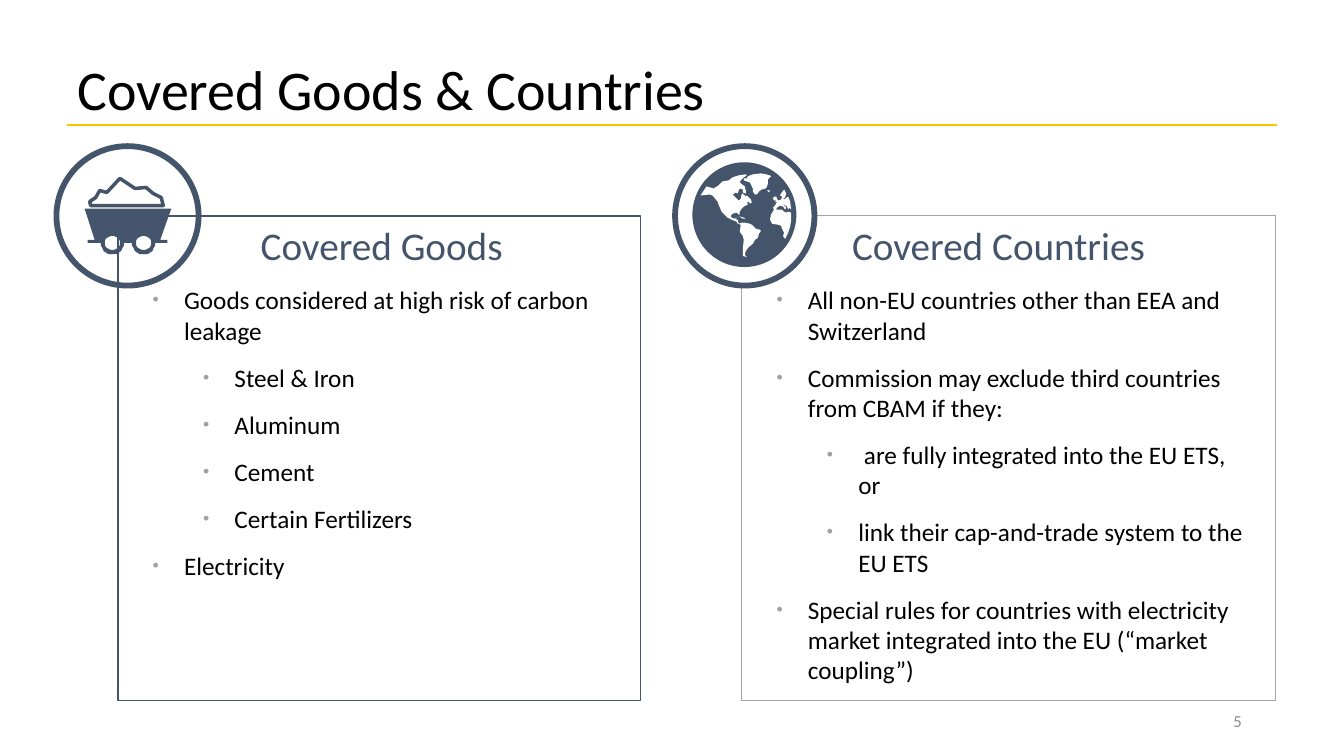
"""Build the slide on covered goods and countries."""
from dataclasses import dataclass
from math import cos, pi, sin

from lxml import etree
from pptx import Presentation
from pptx.dml.color import RGBColor
from pptx.enum.shapes import MSO_CONNECTOR, MSO_SHAPE
from pptx.enum.text import MSO_ANCHOR, PP_ALIGN
from pptx.oxml.ns import qn
from pptx.util import Cm, Pt


@dataclass(frozen=True)
class Theme:
    font: str = "Calibri"
    navy: str = "44546A"
    gold: str = "FFC000"
    grey: str = "A5A5A5"
    bullet: str = "A0A0A0"
    footer: str = "8C8C8C"
    black: str = "000000"
    white: str = "FFFFFF"
    title_size: int = 40
    heading_size: int = 28
    body_size: int = 18
    footer_size: int = 12


THEME = Theme()
TITLE = "Covered Goods & Countries"
PAGE_NUMBER = "5"

PANELS = [
    {
        "heading": "Covered Countries", "left": 18.69, "width": 13.46,
        "border": THEME.grey, "border_width": 0.75, "heading_margin": 0, "heading_indent": 0,
        "points": [
            (0, "All non-EU countries other than EEA and Switzerland"),
            (0, "Commission may exclude third countries from CBAM if they:"),
            (1, " are fully integrated into the EU ETS, or"),
            (1, "link their cap-and-trade system to the EU ETS"),
            (0, "Special rules for countries with electricity market integrated "
                "into the EU (“market coupling”)"),
        ],
    },
    {
        "heading": "Covered Goods", "left": 2.97, "width": 13.18,
        "border": THEME.navy, "border_width": 1, "heading_margin": 1.27, "heading_indent": -0.64,
        "points": [
            (0, "Goods considered at high risk of carbon leakage"),
            (1, "Steel & Iron"),
            (1, "Aluminum"),
            (1, "Cement"),
            (1, "Certain Fertilizers"),
            (0, "Electricity"),
        ],
    },
]
PANEL_TOP, PANEL_HEIGHT = 5.44, 12.22

ICON_UNIT = Cm(0.0254)
ORE = [(90, 204), (89, 200), (95, 196), (99, 189), (106, 191), (119, 177), (134, 187),
       (145, 186), (152, 192), (160, 196), (162, 204)]
WHEELS, AXLE, WHEEL_RADIUS, HUB_RADIUS = (111.5, 142.5), 241, 11.5, 7.5

AMERICAS = [
    (753, 232), (752, 236), (749, 238), (747, 242), (743, 245), (740, 249), (739, 253),
    (741, 255), (737, 254), (737, 247), (738, 238), (737, 234), (734, 230), (735, 223),
    (732, 222), (731, 220), (726, 218), (722, 216), (716, 210), (713, 203), (712, 200),
    (707, 194), (704, 193), (695, 194), (701, 185), (708, 187), (713, 184), (717, 180),
    (723, 179), (727, 176), (733, 174), (740, 173), (741, 174), (738, 176), (734, 180),
    (735, 182), (739, 185), (740, 189), (740, 192), (737, 191), (737, 188), (734, 187),
    (733, 189), (732, 192), (730, 191), (727, 193), (729, 195), (731, 197), (733, 199),
    (735, 197), (736, 192), (738, 193), (740, 195), (741, 194), (745, 198), (746, 201),
    (744, 202), (743, 200), (741, 201), (742, 203), (738, 205), (736, 207), (734, 210),
    (734, 213), (733, 213), (731, 211), (727, 212), (725, 214), (726, 216), (729, 217),
    (731, 216), (730, 218), (732, 218), (733, 222), (736, 221), (739, 221), (744, 222),
    (746, 223), (748, 225), (750, 227), (754, 228), (755, 229),
]
GREENLAND = [
    (756, 188), (753, 190), (751, 193), (749, 193), (747, 190), (747, 187), (745, 183),
    (744, 181), (741, 180), (738, 179), (738, 177), (741, 177), (742, 175), (747, 173),
    (755, 172), (760, 173), (764, 174), (765, 175), (762, 178), (762, 182), (761, 185),
    (760, 187),
]
CARIBBEAN = [(740, 217), (737, 217), (734, 215), (732, 215), (735, 215), (738, 216)]
ICELAND = [(761, 189), (764, 189), (763, 191)]
EURAFRICA = [
    (778, 236), (777, 234), (778, 231), (776, 227), (775, 224), (772, 223), (766, 222),
    (764, 218), (765, 213), (768, 208), (767, 206), (769, 204), (770, 202), (771, 200),
    (769, 200), (770, 198), (768, 199), (767, 197), (768, 195), (770, 195), (772, 199),
    (775, 198), (776, 195), (774, 194), (775, 192), (778, 188), (780, 192), (779, 196),
    (777, 197), (778, 198), (782, 195), (784, 200), (785, 208), (783, 206), (782, 208),
    (781, 205), (778, 203), (777, 203), (780, 206), (779, 208), (777, 205), (774, 204),
    (771, 206), (770, 208), (776, 208), (778, 210), (780, 211), (782, 210), (785, 211),
    (785, 218), (784, 225), (782, 231), (780, 235), (779, 237),
]
LAND = [AMERICAS, GREENLAND, CARIBBEAN, ICELAND, EURAFRICA]


def arc(x, y, radius, start, end, steps=24):
    angles = [start + (end - start) * i / steps for i in range(steps + 1)]
    return [(x + radius * cos(a), y + radius * sin(a)) for a in angles]


def paint(shape, fill=None, line=None, width=1):
    shape.shadow.inherit = False
    if fill:
        shape.fill.solid()
        shape.fill.fore_color.rgb = RGBColor.from_string(fill)
    else:
        shape.fill.background()
    if line:
        shape.line.color.rgb = RGBColor.from_string(line)
        shape.line.width = Pt(width)
    else:
        shape.line.fill.background()
    return shape


def add_preset(slide, preset, box, **style):
    return paint(slide.shapes.add_shape(preset, *map(Cm, box)), **style)


def add_outline(slide, contours, **style):
    builder = slide.shapes.build_freeform(*contours[0][0], scale=ICON_UNIT)
    for number, contour in enumerate(contours):
        if number:
            builder.move_to(*contour[0])
        builder.add_line_segments(contour[1:], close=True)
    return paint(builder.convert_to_shape(), **style)


def write(paragraph, text, size, color, align=PP_ALIGN.LEFT):
    paragraph.alignment = align
    run = paragraph.add_run()
    run.text = text
    run.font.name, run.font.size = THEME.font, Pt(size)
    run.font.color.rgb = RGBColor.from_string(color)


def indent(paragraph, margin, first_line):
    properties = paragraph._p.get_or_add_pPr()
    properties.set("marL", str(Cm(margin)))
    properties.set("indent", str(Cm(first_line)))
    return properties


def add_bullet(paragraph, level):
    paragraph.level = level
    properties = indent(paragraph, 1.42 + 1.27 * level, -0.79)
    color = etree.SubElement(properties, qn("a:buClr"))
    etree.SubElement(color, qn("a:srgbClr"), val=THEME.bullet)
    etree.SubElement(properties, qn("a:buSzPct"), val="70000")
    etree.SubElement(properties, qn("a:buFont"), typeface="Arial")
    etree.SubElement(properties, qn("a:buChar"), char="•")


def add_panel(slide, panel):
    box = (panel["left"], PANEL_TOP, panel["width"], PANEL_HEIGHT)
    frame = add_preset(slide, MSO_SHAPE.RECTANGLE, box, line=panel["border"],
                       width=panel["border_width"]).text_frame
    frame.word_wrap, frame.vertical_anchor = True, MSO_ANCHOR.TOP
    frame.margin_right = Cm(0.76)
    heading = frame.paragraphs[0]
    indent(heading, panel["heading_margin"], panel["heading_indent"])
    heading.space_after = Pt(6)
    write(heading, panel["heading"], THEME.heading_size, THEME.navy, PP_ALIGN.CENTER)
    for level, text in panel["points"]:
        point = frame.add_paragraph()
        add_bullet(point, level)
        point.space_before = point.space_after = Pt(6)
        write(point, text, THEME.body_size, THEME.black)


def add_label(slide, box, text, size, color, align):
    frame = slide.shapes.add_textbox(*map(Cm, box)).text_frame
    frame.word_wrap, frame.vertical_anchor = True, MSO_ANCHOR.MIDDLE
    write(frame.paragraphs[0], text, size, color, align)
    return frame.paragraphs[0]


def add_ring(slide, left, width):
    ring = add_preset(slide, MSO_SHAPE.DONUT, (left, 3.61, width, 3.66), fill=THEME.navy)
    ring.adjustments[0] = 0.04


def add_cart(slide):
    body = [(84, 207), (94, 238), (87, 238), (87, 241)]
    for wheel in WHEELS:
        body += arc(wheel, AXLE, WHEEL_RADIUS, pi, 0)
    body += [(166, 241), (166, 238), (159, 238), (170, 207)]
    hubs = [arc(wheel, AXLE, HUB_RADIUS, 0, 2 * pi) for wheel in WHEELS]
    add_outline(slide, [ORE], line=THEME.navy, width=2.5)
    add_outline(slide, [body, *hubs], fill=THEME.navy)


def main():
    deck = Presentation()
    deck.slide_width, deck.slide_height = Cm(33.87), Cm(19.05)
    slide = deck.slides.add_slide(deck.slide_layouts[6])
    rule = slide.shapes.add_connector(MSO_CONNECTOR.STRAIGHT, Cm(1.7), Cm(3.15), Cm(32.18), Cm(3.15))
    rule.line.color.rgb, rule.line.width = RGBColor.from_string(THEME.gold), Pt(1)
    etree.SubElement(rule._element.spPr, qn("a:effectLst"))
    title = add_label(slide, (1.7, 1.47, 30.48, 1.7), TITLE, THEME.title_size,
                      THEME.black, PP_ALIGN.LEFT)
    title.line_spacing = 0.9
    for panel in PANELS:
        add_panel(slide, panel)
    add_label(slide, (23.93, 17.65, 7.62, 1.02), PAGE_NUMBER, THEME.footer_size,
              THEME.footer, PP_ALIGN.RIGHT)
    add_ring(slide, 1.35, 3.73)
    add_cart(slide)
    add_preset(slide, MSO_SHAPE.RECTANGLE, (18.39, 5.36, 2.18, 1.83), fill=THEME.white)
    add_ring(slide, 16.94, 3.66)
    add_preset(slide, MSO_SHAPE.OVAL, (17.45, 4.09, 2.62, 2.64), fill=THEME.navy)
    add_outline(slide, LAND, fill=THEME.white)
    deck.save("out.pptx")


if __name__ == "__main__":
    main()
